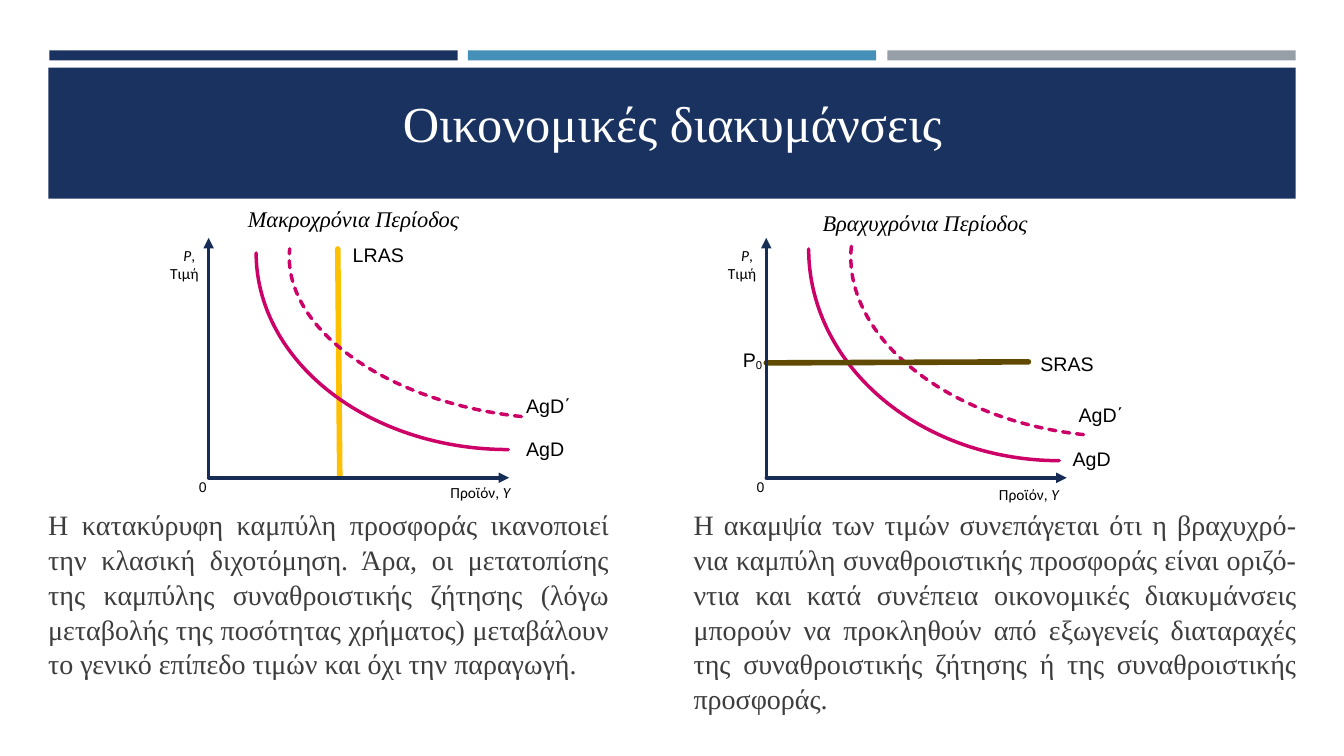
import dataclasses
from typing import Any

import lxml.etree
import pptx
import pptx.dml.color
import pptx.enum.dml
import pptx.enum.shapes
import pptx.enum.text
import pptx.oxml.ns
import pptx.util

PX = 9144
Align = pptx.enum.text.PP_ALIGN
Preset = pptx.enum.shapes.MSO_SHAPE


@dataclasses.dataclass(frozen=True)
class Theme:
    navy: str = "1A3260"
    blue: str = "4590B8"
    grey: str = "969FA7"
    axis: str = "172D56"
    demand: str = "CC0066"
    long_run: str = "FFC000"
    short_run: str = "604900"
    white: str = "FFFFFF"
    black: str = "000000"
    body: str = "3D3D3D"
    title_size: int = 36
    body_size: int = 20
    heading_size: int = 16
    curve_size: int = 14
    axis_size: int = 11
    zero_size: int = 10
    thin: float = 2.5
    thick: float = 4


THEME = Theme()


@dataclasses.dataclass(frozen=True)
class Style:
    font: str
    size: int
    color: str = THEME.black
    italic: bool = False


TITLE = Style("Times New Roman", THEME.title_size, THEME.white)
BODY = Style("Times New Roman", THEME.body_size, THEME.body)
HEADING = Style("Times New Roman", THEME.heading_size, italic=True)
CURVE = Style("Arial", THEME.curve_size)
AXIS = Style("Calibri", THEME.axis_size)
VARIABLE = dataclasses.replace(AXIS, italic=True)
ZERO = Style("Arial", THEME.zero_size)


@dataclasses.dataclass(frozen=True)
class Span:
    text: str
    style: Style
    baseline: int = 0


@dataclasses.dataclass(frozen=True)
class Box:
    left: int
    top: int
    width: int
    height: int

    def emu(self) -> tuple[int, ...]:
        return tuple(PX * length for length in dataclasses.astuple(self))


@dataclasses.dataclass(frozen=True)
class Label:
    box: Box
    lines: list[list[Span]]
    align: Any = Align.LEFT
    frame: dict[str, Any] = dataclasses.field(default_factory=dict)
    para: dict[str, Any] = dataclasses.field(default_factory=dict)


@dataclasses.dataclass(frozen=True)
class Stroke:
    start: tuple[int, int]
    end: tuple[int, int]
    color: str
    weight: float
    arrow: bool = False


@dataclasses.dataclass(frozen=True)
class Arc:
    box: Box
    rotation: int = 180
    dashed: bool = False


@dataclasses.dataclass(frozen=True)
class Panel:
    origin: int
    heading: Label
    graph: list[Arc | Stroke]
    labels: list[Label]
    output_box: Box
    body: Label


def apply(target: Any, values: dict[str, Any]) -> None:
    for name, value in values.items():
        setattr(target, name, value)


def rgb(color: str) -> pptx.dml.color.RGBColor:
    return pptx.dml.color.RGBColor.from_string(color)


def write_span(para: Any, span: Span) -> None:
    run = para.add_run()
    run.text = span.text
    style = span.style
    apply(run.font, {"name": style.font, "size": pptx.util.Pt(style.size), "italic": style.italic})
    run.font.color.rgb = rgb(style.color)
    if span.baseline:
        run.font._element.set("baseline", str(span.baseline))


def draw_label(page: Any, label: Label) -> None:
    frame = page.shapes.add_textbox(*label.box.emu()).text_frame
    apply(frame, {"word_wrap": True} | label.frame)
    for index, spans in enumerate(label.lines):
        para = frame.add_paragraph() if index else frame.paragraphs[0]
        apply(para, {"alignment": label.align} | label.para)
        for span in spans:
            write_span(para, span)


def format_line(shape: Any, color: str, weight: float) -> Any:
    shape.line.color.rgb = rgb(color)
    shape.line.width = pptx.util.Pt(weight)
    outline = shape.element.spPr.find(pptx.oxml.ns.qn("a:ln"))
    outline.set("cap", "rnd")
    return outline


def draw_stroke(page: Any, stroke: Stroke) -> None:
    ends = [PX * length for length in stroke.start + stroke.end]
    line = page.shapes.add_connector(pptx.enum.shapes.MSO_CONNECTOR.STRAIGHT, *ends)
    outline = format_line(line, stroke.color, stroke.weight)
    if stroke.arrow:
        lxml.etree.SubElement(outline, pptx.oxml.ns.qn("a:headEnd"), type="triangle")
    lxml.etree.SubElement(line.element.spPr, pptx.oxml.ns.qn("a:effectLst"))


def draw_arc(page: Any, arc: Arc) -> None:
    curve = page.shapes.add_shape(Preset.ARC, *arc.box.emu())
    curve.shadow.inherit = False
    curve.fill.background()
    curve.rotation = arc.rotation
    format_line(curve, THEME.demand, THEME.thin)
    if arc.dashed:
        curve.line.dash_style = pptx.enum.dml.MSO_LINE.SQUARE_DOT


def draw_bar(page: Any, box: Box, color: str) -> None:
    bar = page.shapes.add_shape(Preset.RECTANGLE, *box.emu())
    bar.shadow.inherit = False
    bar.fill.solid()
    bar.fill.fore_color.rgb = rgb(color)
    bar.line.fill.background()


def draw_title(page: Any, text: str) -> None:
    title = page.shapes.title
    title.element.getparent().append(title.element)
    apply(title, dict(zip(("left", "top", "width", "height"), Box(64, 69, 1206, 87).emu())))
    apply(title.text_frame, {"vertical_anchor": pptx.enum.text.MSO_ANCHOR.BOTTOM,
                             "auto_size": pptx.enum.text.MSO_AUTO_SIZE.NONE})
    para = title.text_frame.paragraphs[0]
    para.alignment = Align.CENTER
    write_span(para, Span(text, TITLE))


def draw_panel(page: Any, panel: Panel) -> None:
    x, base = panel.origin, 474
    for item in panel.graph:
        draw_arc(page, item) if isinstance(item, Arc) else draw_stroke(page, item)
    for tip in ((x, 236), (x + 298, base)):
        draw_stroke(page, Stroke(tip, (x, base), THEME.axis, THEME.thin, arrow=True))
    price = [[Span("P", VARIABLE), Span(", ", AXIS)], [Span("Τιμή", AXIS)]]
    output = [[Span("Προϊόν, ", AXIS), Span("Y", VARIABLE)]]
    axis_labels = [
        Label(Box(x - 126, 239, 126, 34), price, Align.RIGHT),
        Label(panel.output_box, output, Align.RIGHT),
        Label(Box(x - 18, 470, 16, 27), [[Span("0", ZERO)]], Align.RIGHT,
              {"margin_left": 0, "margin_right": 0}),
    ]
    for label in [panel.heading, *axis_labels, *panel.labels, panel.body]:
        draw_label(page, label)


def heading(left: int, top: int, text: str) -> Label:
    return Label(Box(left, top, 237, 37), [[Span(text, HEADING)]])


def curve_label(left: int, top: int, text: str) -> Label:
    return Label(Box(left, top, 96, 34), [[Span(text, CURVE)]])


def body(box: Box, text: str) -> Label:
    return Label(box, [[Span(text, BODY)]], Align.JUSTIFY,
                 para={"space_after": pptx.util.Pt(6), "line_spacing": 1.04})


PANELS = [
    Panel(207, heading(236, 199, "Μακροχρόνια Περίοδος"),
          [Stroke((335, 247), (337, 472), THEME.long_run, THEME.thick),
           Arc(Box(254, 56, 500, 390)), Arc(Box(286, 131, 492, 283), 186, True)],
          [curve_label(340, 236, "LRAS"), curve_label(512, 429, "AgD"), curve_label(512, 386, "AgD΄")],
          Box(416, 474, 100, 29),
          body(Box(38, 497, 576, 191), "Η κατακύρυφη καμπύλη προσφοράς ικανοποιεί την κλασική διχοτόμηση. Άρα, οι μετατοπίσης της καμπύλης συναθροιστικής ζήτησης (λόγω μεταβολής της ποσότητας χρήματος) μεταβάλουν το γενικό επίπεδο τιμών και όχι την παραγωγή.")),
    Panel(760, heading(806, 203, "Βραχυχρόνια Περίοδος"),
          [Arc(Box(802, 37, 497, 420)), Arc(Box(843, 108, 497, 324), 186, True),
           Stroke((1020, 359), (760, 360), THEME.short_run, THEME.thick)],
          [curve_label(1022, 344, "SRAS"), curve_label(1054, 438, "AgD"), curve_label(1060, 395, "AgD΄"),
           Label(Box(727, 340, 43, 34), [[Span("P", CURVE), Span("0", CURVE, -10000)]])],
          Box(960, 476, 100, 29),
          body(Box(678, 497, 618, 219), "Η ακαμψία των τιμών συνεπάγεται ότι η βραχυχρό-νια καμπύλη συναθροιστικής προσφοράς είναι οριζό-ντια και κατά συνέπεια οικονομικές διακυμάνσεις μπορούν να προκληθούν από εξωγενείς διαταραχές της συναθροιστικής ζήτησης ή της συναθροιστικής προσφοράς.")),
]


def main() -> None:
    deck = pptx.Presentation()
    apply(deck, {"slide_width": 1333 * PX, "slide_height": 750 * PX})
    page = deck.slides.add_slide(deck.slide_layouts[5])
    for index, color in enumerate((THEME.navy, THEME.blue, THEME.grey)):
        draw_bar(page, Box(49 + 831 * index // 2, 50, 405, 10), color)
    draw_bar(page, Box(48, 67, 1237, 130), THEME.navy)
    draw_title(page, "Οικονομικές διακυμάνσεις")
    for panel in PANELS:
        draw_panel(page, panel)
    deck.save("out.pptx")


if __name__ == "__main__":
    main()
